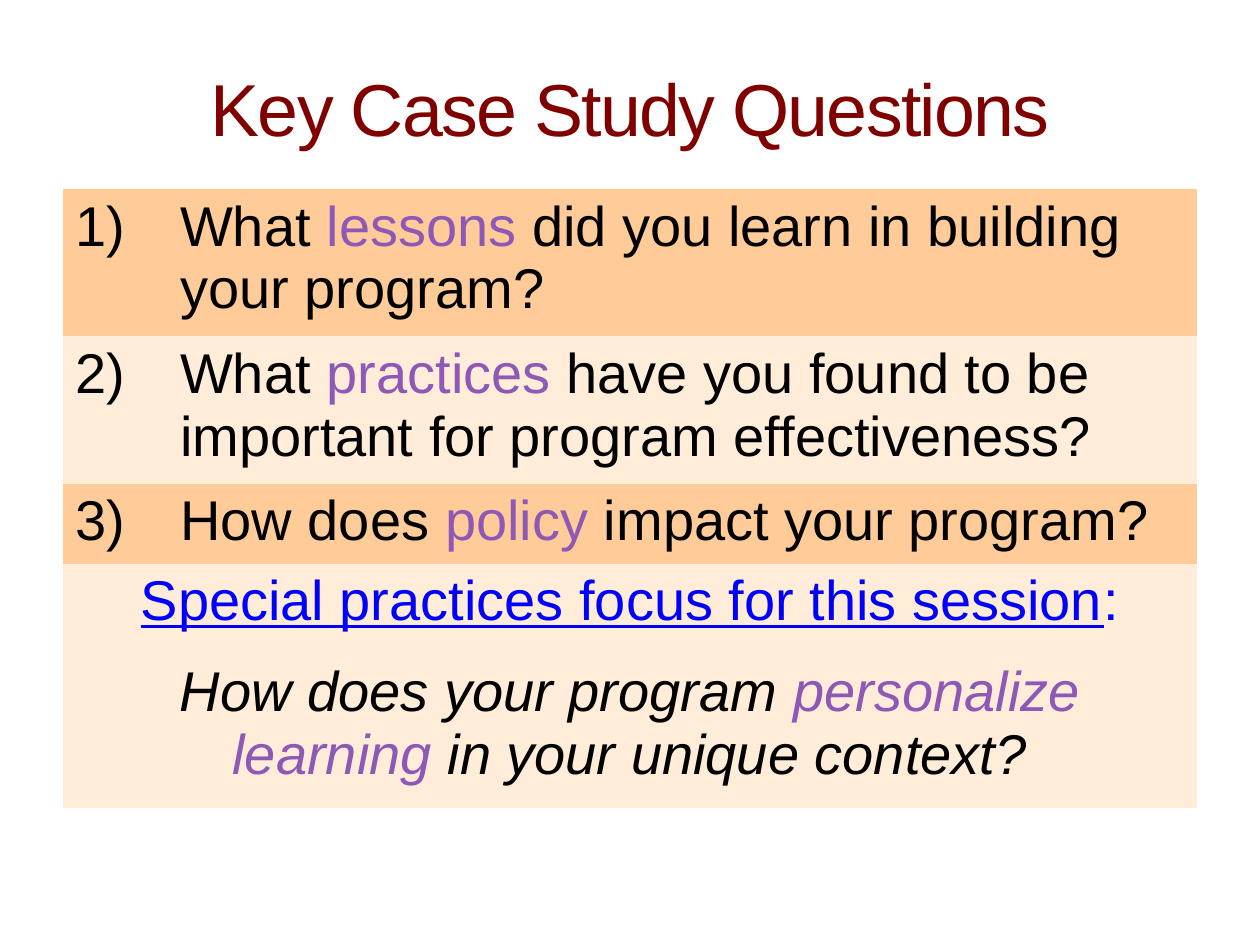
from pptx import Presentation
from pptx.dml.color import RGBColor as RGB
from pptx.enum.text import MSO_ANCHOR as Anchor, PP_ALIGN as Align
from pptx.oxml.ns import qn
from pptx.util import Inches, Pt

MAROON = RGB(0x80, 0x00, 0x00)
BLACK = RGB(0x00, 0x00, 0x00)
PURPLE = RGB(0x8E, 0x58, 0xB6)
BLUE = RGB(0x00, 0x00, 0xFF)
PEACH = RGB(0xFF, 0xCC, 0x99)
CREAM = RGB(0xFF, 0xEC, 0xD9)
PLAIN = "{2D5ABB26-0587-4C30-8999-92F81FD0307C}"

ASKS = [
    ("What ", "lessons", " did you learn in building your program?"),
    ("What ", "practices", " have you found to be important for program effectiveness?"),
    ("How does ", "policy", " impact your program?"),
]
FOCUS = ("How does your program ", "personalize learning", " in your unique context?")


def add_text(para, text, size=32, color=BLACK, italic=False, under=False, track=0):
    run = para.add_run()
    run.text = text
    font = run.font
    font.name = "Arial"
    font.size = Pt(size)
    font.color.rgb = color
    font.italic = italic
    font.underline = under
    if track:
        run._r.get_or_add_rPr().set("spc", str(track * 100))


def add_ask(para, parts, **form):
    for text, color in zip(parts, (BLACK, PURPLE, BLACK)):
        add_text(para, text, color=color, **form)


def add_title(slide, left, top, width, height):
    frame = slide.shapes.add_textbox(left, top, width, height).text_frame
    frame.word_wrap = True
    frame.vertical_anchor = Anchor.BOTTOM
    para = frame.paragraphs[0]
    para.alignment = Align.CENTER
    add_text(para, "Key Case Study Questions", size=42, color=MAROON, track=-1)


def add_focus(cell):
    frame = cell.text_frame
    head, body = frame.paragraphs[0], frame.add_paragraph()
    head.alignment = body.alignment = Align.CENTER
    body.space_before = Pt(16)
    add_text(head, "Special practices focus for this session", color=BLUE, under=True)
    add_text(head, ":", color=BLUE)
    add_ask(body, FOCUS, italic=True)


def add_grid(slide, left, top, width, height):
    table = slide.shapes.add_table(4, 2, left, top, width, height).table
    table.first_row = table.horz_banding = False
    table._tbl.tblPr.find(qn("a:tableStyleId")).text = PLAIN
    table.columns[0].width = Inches(0.83)
    table.columns[1].width = width - Inches(0.83)
    for row, size in zip(table.rows, (1.17, 1.17, 0.63, 1.94)):
        row.height = Inches(size)
    for i, row in enumerate(table.rows):
        for cell in row.cells:
            cell.fill.solid()
            cell.fill.fore_color.rgb = CREAM if i % 2 else PEACH
    for i, parts in enumerate(ASKS):
        add_text(table.cell(i, 0).text_frame.paragraphs[0], f"{i + 1})")
        add_ask(table.cell(i, 1).text_frame.paragraphs[0], parts)
    last = table.cell(3, 0)
    last.merge(table.cell(3, 1))
    add_focus(last)


def main():
    deck = Presentation()
    deck.slide_width, deck.slide_height = Inches(10), Inches(7.5)
    slide = deck.slides.add_slide(deck.slide_layouts[6])
    add_title(slide, Inches(0.5), Inches(0.3), Inches(9), Inches(0.95))
    add_grid(slide, Inches(0.5), Inches(1.5), Inches(9), Inches(4.91))
    deck.save("out.pptx")


if __name__ == "__main__":
    main()
